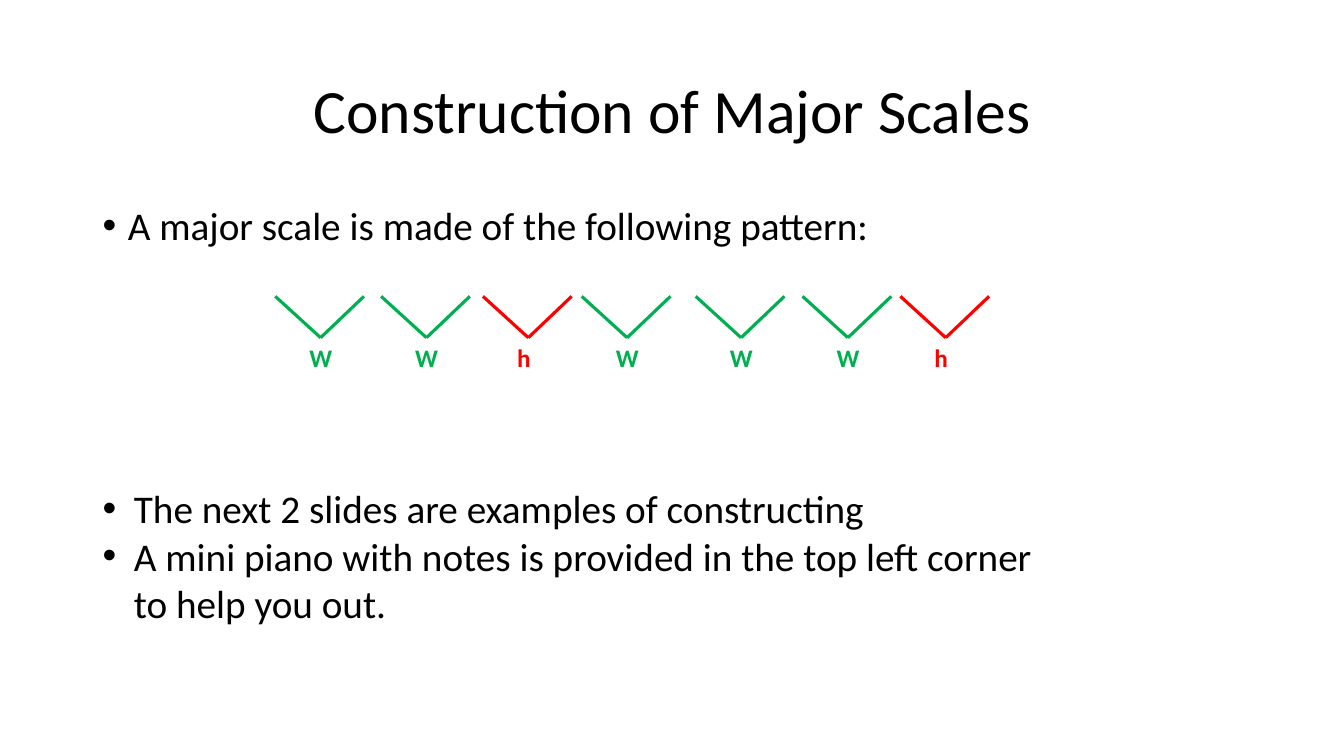
from lxml import etree
from pptx import Presentation
from pptx.dml.color import RGBColor
from pptx.enum.shapes import MSO_CONNECTOR
from pptx.enum.text import MSO_ANCHOR, MSO_AUTO_SIZE, PP_ALIGN
from pptx.oxml.ns import qn
from pptx.util import Pt

BLACK = RGBColor(0x00, 0x00, 0x00)
GREEN = RGBColor(0x00, 0xB0, 0x50)
RED = RGBColor(0xFF, 0x00, 0x00)
STRAIGHT = MSO_CONNECTOR.STRAIGHT
MIDDLE, TOP = MSO_ANCHOR.MIDDLE, MSO_ANCHOR.TOP
CENTER, LEFT = PP_ALIGN.CENTER, PP_ALIGN.LEFT
FIXED, GROW = MSO_AUTO_SIZE.NONE, MSO_AUTO_SIZE.SHAPE_TO_FIT_TEXT

PX = 9144
TITLE_ONLY = 5
STEP_TOP, STEP_BOTTOM = 294, 335
STEP_STYLES = {"W": (GREEN, 43), "h": (RED, 34)}
SCALE_STEPS = [(273, "W"), (378, "W"), (479, "h"), (577, "W"),
               (690, "W"), (796, "W"), (893, "h")]


def apply(target, values):
    for attribute, value in values.items():
        setattr(target, attribute, value)


class ScaleSlide:
    font_name = "Calibri"

    def __init__(self, presentation):
        layout = presentation.slide_layouts[TITLE_ONLY]
        self.slide = presentation.slides.add_slide(layout)

    def place(self, shape, box):
        sides = ("left", "top", "width", "height")
        apply(shape, {side: length * PX for side, length in zip(sides, box)})

    def fill_text(self, frame, lines, size, color=BLACK, bold=False, **paragraph_format):
        for index, line in enumerate(lines):
            paragraph = frame.add_paragraph() if index else frame.paragraphs[0]
            apply(paragraph, paragraph_format)
            run = paragraph.add_run()
            run.text = line
            apply(run.font, {"name": self.font_name, "size": Pt(size), "bold": bold})
            run.font.color.rgb = color

    def title(self, wording, box):
        heading = self.slide.shapes.title
        self.place(heading, box)
        apply(heading.text_frame, {"vertical_anchor": MIDDLE, "word_wrap": True,
                                   "auto_size": FIXED})
        self.fill_text(heading.text_frame, [wording], 44, alignment=CENTER,
                       line_spacing=0.9)

    def text(self, lines, box, size, wrap=True, auto_size=GROW, **text_format):
        area = self.slide.shapes.add_textbox(0, 0, 0, 0)
        frame = area.text_frame
        apply(frame, {"word_wrap": wrap, "auto_size": auto_size, "vertical_anchor": TOP})
        self.fill_text(frame, lines, size, alignment=LEFT, **text_format)
        self.place(area, box)
        return frame

    def bullets(self, lines, box, indent, **text_format):
        frame = self.text(lines, box, 28, **text_format)
        for paragraph in frame.paragraphs:
            properties = paragraph._p.get_or_add_pPr()
            properties.set("marL", str(indent * PX))
            properties.set("indent", str(-indent * PX))
            etree.SubElement(properties, qn("a:buFont"), typeface="Arial")
            etree.SubElement(properties, qn("a:buChar"), char="•")

    def line(self, start, end, color):
        ends = [length * PX for length in (*start, *end)]
        stroke = self.slide.shapes.add_connector(STRAIGHT, *ends)
        stroke.line.color.rgb = color
        stroke.line.width = Pt(2.25)
        etree.SubElement(stroke._element.spPr, qn("a:effectLst"))

    def scale_step(self, left, label):
        color, label_width = STEP_STYLES[label]
        valley = (left + 45, STEP_BOTTOM)
        self.line((left, STEP_TOP), valley, color)
        self.line(valley, (left + 88, STEP_TOP), color)
        self.text([label], (left + 24, STEP_BOTTOM, label_width, 40), 18,
                  wrap=False, color=color, bold=True)


def main():
    presentation = Presentation()
    apply(presentation, {"slide_width": 1333 * PX, "slide_height": 750 * PX})
    scales = ScaleSlide(presentation)
    scales.title("Construction of Major Scales", (92, 40, 1150, 145))
    scales.bullets(["A major scale is made of the following pattern:"],
                   (92, 200, 1150, 476), 25, auto_size=FIXED,
                   line_spacing=0.9, space_before=Pt(10))
    for left, label in SCALE_STEPS:
        scales.scale_step(left, label)
    scales.bullets(["The next 2 slides are examples of constructing",
                    "A mini piano with notes is provided in the top left corner "
                    "to help you out."],
                   (92, 476, 955, 151), 31)
    presentation.save("out.pptx")


if __name__ == "__main__":
    main()
